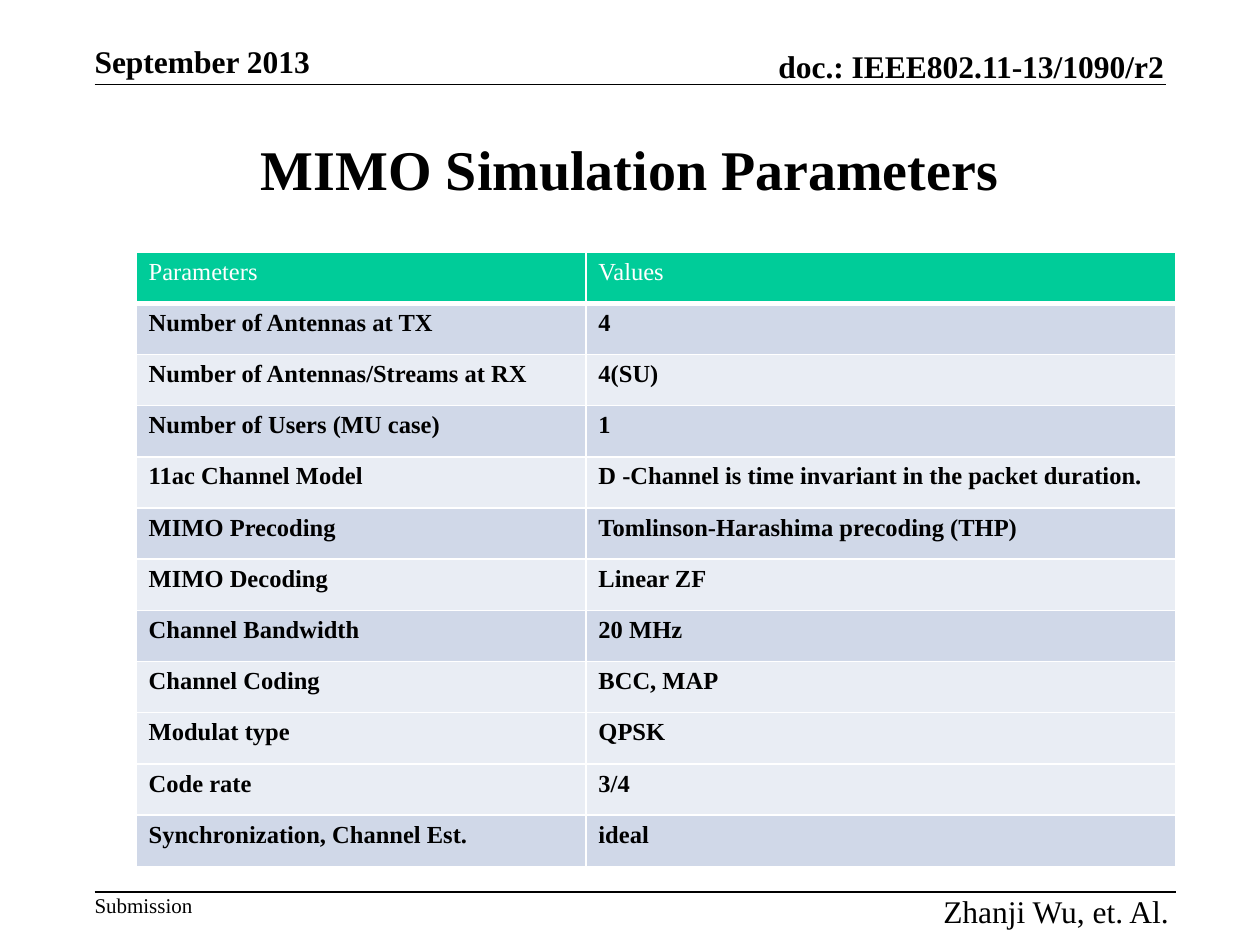
from dataclasses import dataclass

from lxml.etree import SubElement
from pptx import Presentation
from pptx.dml.color import RGBColor
from pptx.enum.shapes import MSO_CONNECTOR
from pptx.enum.text import MSO_ANCHOR, MSO_AUTO_SIZE, PP_ALIGN
from pptx.oxml.ns import qn
from pptx.util import Inches, Pt

FONT = "Times New Roman"
BLACK, WHITE, GREEN = "000000", "FFFFFF", "00CC99"
DARK_BAND, LIGHT_BAND = "D0D8E8", "E9EDF4"


@dataclass
class Label:
    text: str
    left: float
    top: float
    width: float
    height: float
    size: int = 18
    bold: bool = False
    align: PP_ALIGN = PP_ALIGN.LEFT
    anchor: MSO_ANCHOR = MSO_ANCHOR.TOP


@dataclass
class Parameter:
    name: str
    value: str
    fill: str
    color: str = BLACK
    bold: bool = True


LABELS = [
    Label("September 2013", 0.75, 0.33, 1.75, 0.3, bold=True, anchor=MSO_ANCHOR.BOTTOM),
    Label("doc.: IEEE802.11-13/1090/r2", 5.64, 0.37, 3.6, 0.3, bold=True,
          align=PP_ALIGN.RIGHT, anchor=MSO_ANCHOR.BOTTOM),
    Label("Submission", 0.75, 7.08, 0.78, 0.2, size=12),
    Label("Zhanji Wu, et. Al. ", 7.34, 7.08, 2, 0.3, align=PP_ALIGN.RIGHT),
]

PARAMETERS = [
    Parameter("Parameters", "Values", GREEN, WHITE, False),
    Parameter("Number of Antennas at TX", "4", DARK_BAND),
    Parameter("Number of Antennas/Streams at RX", "4(SU)", LIGHT_BAND),
    Parameter("Number of Users (MU case)", "1", DARK_BAND),
    Parameter("11ac Channel Model",
              "D -Channel is time invariant in the packet duration.", LIGHT_BAND),
    Parameter("MIMO Precoding", "Tomlinson-Harashima precoding (THP)", DARK_BAND),
    Parameter("MIMO Decoding", "Linear ZF", LIGHT_BAND),
    Parameter("Channel Bandwidth", "20 MHz", DARK_BAND),
    Parameter("Channel Coding", "BCC, MAP", LIGHT_BAND),
    Parameter("Modulat type", "QPSK", LIGHT_BAND),
    Parameter("Code rate", "3/4", LIGHT_BAND),
    Parameter("Synchronization, Channel Est.", "ideal", DARK_BAND),
]


def rgb(color: str) -> RGBColor:
    return RGBColor.from_string(color)


def format_text(frame, size: int, color: str = BLACK, bold: bool = False,
                align: PP_ALIGN = PP_ALIGN.LEFT) -> None:
    for para in frame.paragraphs:
        para.alignment = align
        for span in para.runs:
            span.font.name = FONT
            span.font.size = Pt(size)
            span.font.bold = bold
            span.font.color.rgb = rgb(color)


def add_label(page, label: Label) -> None:
    box = page.shapes.add_textbox(Inches(label.left), Inches(label.top),
                                  Inches(label.width), Inches(label.height))
    frame = box.text_frame
    frame.text = label.text
    frame.word_wrap = False
    frame.auto_size = MSO_AUTO_SIZE.SHAPE_TO_FIT_TEXT
    frame.vertical_anchor = label.anchor
    frame.margin_left = frame.margin_right = 0
    frame.margin_top = frame.margin_bottom = 0
    format_text(frame, label.size, bold=label.bold, align=label.align)


def add_rule(page, left: float, right: float, top: float) -> None:
    rule = page.shapes.add_connector(MSO_CONNECTOR.STRAIGHT, Inches(left), Inches(top),
                                     Inches(right), Inches(top))
    rule.line.color.rgb = rgb(BLACK)
    rule.line.width = Pt(1)
    SubElement(rule._element.spPr, qn("a:effectLst"))


def set_borders(cell, top: int, bottom: int) -> None:
    properties = cell._tc.get_or_add_tcPr()
    for side, width in (("L", 1), ("R", 1), ("T", top), ("B", bottom)):
        border = SubElement(properties, qn(f"a:ln{side}"), w=str(Pt(width)))
        fill = SubElement(border, qn("a:solidFill"))
        SubElement(fill, qn("a:srgbClr"), val=WHITE)


def add_parameter_table(page, parameters: list[Parameter]) -> None:
    table = page.shapes.add_table(len(parameters), 2, Inches(1.08), Inches(2),
                                  Inches(8.25), Inches(4.88)).table
    for column, width in zip(table.columns, (3.57, 4.68)):
        column.width = Inches(width)
    for index, parameter in enumerate(parameters):
        for column, text in enumerate((parameter.name, parameter.value)):
            cell = table.cell(index, column)
            cell.text_frame.text = text
            format_text(cell.text_frame, 14, parameter.color, parameter.bold)
            # The header row is set off by a thick border
            set_borders(cell, top=3 if index == 1 else 1, bottom=3 if index == 0 else 1)
            cell.fill.solid()
            cell.fill.fore_color.rgb = rgb(parameter.fill)


def main() -> None:
    deck = Presentation()
    deck.slide_width, deck.slide_height = Inches(10), Inches(7.5)
    page = deck.slides.add_slide(deck.slide_layouts[5])

    # Header and footer
    for label in LABELS:
        add_label(page, label)
    add_rule(page, 0.75, 9.25, 0.67)
    add_rule(page, 0.75, 9.33, 7.08)

    # Title
    title = page.shapes.title
    title.left, title.top = Inches(0.75), Inches(0.75)
    title.width, title.height = Inches(8.5), Inches(1.17)
    title.text_frame.text = "MIMO Simulation Parameters"
    title.text_frame.vertical_anchor = MSO_ANCHOR.MIDDLE
    format_text(title.text_frame, 32, bold=True, align=PP_ALIGN.CENTER)

    # Simulation parameters
    add_parameter_table(page, PARAMETERS)
    deck.save("out.pptx")


if __name__ == "__main__":
    main()
